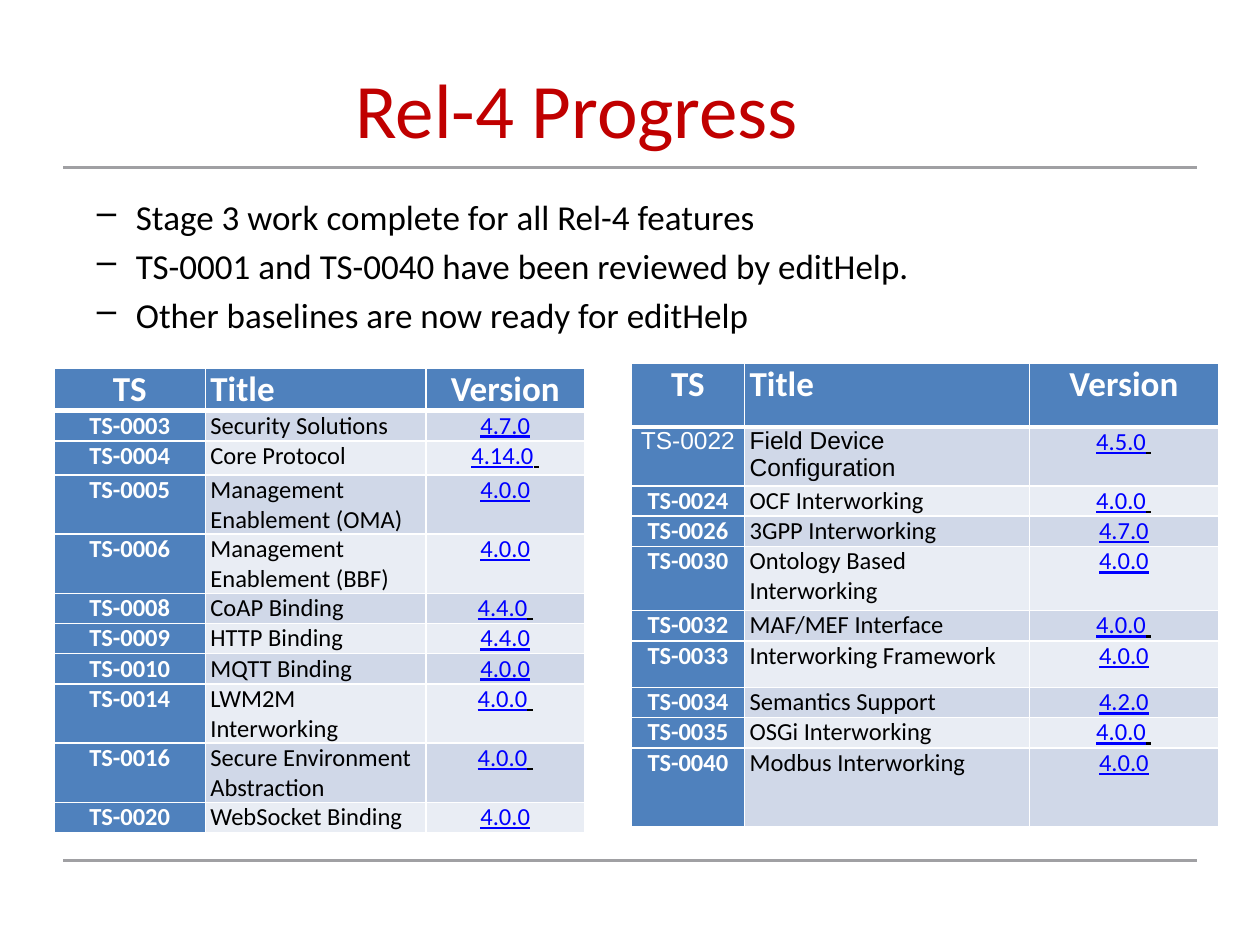
import dataclasses

import lxml.etree
import pptx
import pptx.dml.color
import pptx.enum.shapes
import pptx.enum.text
import pptx.oxml.ns
import pptx.util

Inches = pptx.util.Inches
Pt = pptx.util.Pt
ALIGN = pptx.enum.text.PP_ALIGN


@dataclasses.dataclass(frozen=True)
class Theme:
    font: str = "Calibri"
    alternate_font: str = "Arial"
    title_color: str = "C00000"
    text_color: str = "000000"
    light: str = "FFFFFF"
    link: str = "0000FF"
    rule: str = "A0A0A3"
    accent: str = "4F81BD"
    bands: tuple = ("D0D8E8", "E9EDF4")
    title_size: int = 44
    heading_size: int = 20
    cell_size: int = 14


THEME = Theme()

POINTS = [
    "Stage 3 work complete for all Rel-4 features",
    "TS-0001 and TS-0040 have been reviewed by editHelp.",
    "Other baselines are now ready for editHelp",
]
HEADINGS = ("TS", "Title", "Version")
EARLIER_SPECS = [
    ("TS-0003", "Security Solutions", "4.7.0", 0.24),
    ("TS-0004", "Core Protocol", "4.14.0 ", 0.27),
    ("TS-0005", "Management Enablement (OMA)", "4.0.0", 0.47),
    ("TS-0006", "Management Enablement (BBF)", "4.0.0", 0.47),
    ("TS-0008", "CoAP Binding", "4.4.0 ", 0.24),
    ("TS-0009", "HTTP Binding", "4.4.0", 0.24),
    ("TS-0010", "MQTT Binding", "4.0.0", 0.24),
    ("TS-0014", "LWM2M Interworking", "4.0.0 ", 0.47),
    ("TS-0016", "Secure Environment Abstraction", "4.0.0 ", 0.47),
    ("TS-0020", "WebSocket Binding", "4.0.0", 0.24),
]
LATER_SPECS = [
    ("TS-0022", "Field Device Configuration", "4.5.0 ", 0.43),
    ("TS-0024", "OCF Interworking", "4.0.0 ", 0.24),
    ("TS-0026", "3GPP Interworking", "4.7.0", 0.24),
    ("TS-0030", "Ontology Based Interworking", "4.0.0", 0.51),
    ("TS-0032", "MAF/MEF Interface", "4.0.0 ", 0.24),
    ("TS-0033", "Interworking Framework", "4.0.0", 0.37),
    ("TS-0034", "Semantics Support", "4.2.0", 0.24),
    ("TS-0035", "OSGi Interworking", "4.0.0 ", 0.24),
    ("TS-0040", "Modbus Interworking", "4.0.0", 0.63),
]
ALTERNATE_FONT_SPECS = {"TS-0022"}


def rgb(value):
    return pptx.dml.color.RGBColor.from_string(value)


def add_text(paragraph, text, size, color=THEME.text_color, font=THEME.font,
             bold=False, underline=False, align=ALIGN.LEFT):
    paragraph.alignment = align
    run = paragraph.add_run()
    run.text = text
    run.font.size = Pt(size)
    run.font.name = font
    run.font.bold = bold
    run.font.underline = underline
    run.font.color.rgb = rgb(color)


def add_frame(slide, left, top, width, height):
    frame = slide.shapes.add_textbox(
        Inches(left), Inches(top), Inches(width), Inches(height)).text_frame
    frame.word_wrap = True
    return frame


def add_rule(slide, y):
    rule = slide.shapes.add_connector(
        pptx.enum.shapes.MSO_CONNECTOR.STRAIGHT,
        Inches(0.5), Inches(y), Inches(9.5), Inches(y))
    rule.line.color.rgb = rgb(THEME.rule)
    rule.line.width = Pt(1.75)
    lxml.etree.SubElement(rule._element.spPr, pptx.oxml.ns.qn("a:effectLst"))


def add_title(slide, text):
    frame = add_frame(slide, 0.08, 0.42, 9, 1.25)
    frame.margin_top = Inches(0.07)
    add_text(frame.paragraphs[0], text, THEME.title_size,
             color=THEME.title_color, align=ALIGN.CENTER)


def add_points(slide, points):
    frame = add_frame(slide, 0.17, 1.5, 9.54, 1.58)
    for index, point in enumerate(points):
        paragraph = frame.add_paragraph() if index else frame.paragraphs[0]
        paragraph.level = 1
        if index:
            paragraph.space_before = Pt(4)
        properties = paragraph._p.get_or_add_pPr()
        properties.set("marL", str(Inches(0.81)))
        properties.set("indent", str(Inches(-0.31)))
        lxml.etree.SubElement(
            properties, pptx.oxml.ns.qn("a:buChar"), char="–")
        add_text(paragraph, point, THEME.heading_size)


def style_cell(cell, fill, top=1, bottom=1):
    cell.margin_left = cell.margin_right = Inches(0.04)
    cell.margin_top = cell.margin_bottom = 0
    properties = cell._tc.get_or_add_tcPr()
    for side, width in (("L", 1), ("R", 1), ("T", top), ("B", bottom)):
        border = lxml.etree.SubElement(
            properties, pptx.oxml.ns.qn(f"a:ln{side}"), w=str(Pt(width)))
        paint = lxml.etree.SubElement(border, pptx.oxml.ns.qn("a:solidFill"))
        lxml.etree.SubElement(
            paint, pptx.oxml.ns.qn("a:srgbClr"), val=THEME.light)
    cell.fill.solid()
    cell.fill.fore_color.rgb = rgb(fill)


def fill_heading_row(cells):
    for cell, heading in zip(cells, HEADINGS):
        style_cell(cell, THEME.accent, bottom=3)
        add_text(cell.text_frame.paragraphs[0], heading, THEME.heading_size,
                 color=THEME.light, bold=True,
                 align=ALIGN.LEFT if heading == "Title" else ALIGN.CENTER)


def fill_spec_row(cells, number, title, version, band, top):
    for cell, fill in zip(cells, (THEME.accent, band, band)):
        style_cell(cell, fill, top=top)
    number_line, title_line, version_line = (
        cell.text_frame.paragraphs[0] for cell in cells)
    alternate = number in ALTERNATE_FONT_SPECS
    font = THEME.alternate_font if alternate else THEME.font
    add_text(number_line, number, THEME.cell_size, color=THEME.light,
             font=font, bold=not alternate, align=ALIGN.CENTER)
    add_text(title_line, title, THEME.cell_size, font=font)
    release = version.rstrip()
    add_text(version_line, release, THEME.cell_size, color=THEME.link,
             underline=True, align=ALIGN.CENTER)
    if release != version:
        add_text(version_line, " ", THEME.cell_size, underline=True,
                 align=ALIGN.CENTER)


def add_spec_table(slide, left, top, widths, heading_height, specs):
    heights = [heading_height] + [spec[-1] for spec in specs]
    table = slide.shapes.add_table(
        len(heights), len(widths), Inches(left), Inches(top),
        Inches(sum(widths)), Inches(sum(heights))).table
    table.horz_banding = False
    for column, width in zip(table.columns, widths):
        column.width = Inches(width)
    for row, height in zip(table.rows, heights):
        row.height = Inches(height)
    heading_row, *spec_rows = table.rows
    fill_heading_row(heading_row.cells)
    for index, (row, spec) in enumerate(zip(spec_rows, specs)):
        fill_spec_row(list(row.cells), *spec[:3], band=THEME.bands[index % 2],
                      top=1 if index else 3)


def main():
    deck = pptx.Presentation()
    deck.slide_width = Inches(10)
    deck.slide_height = Inches(7.5)
    slide = deck.slides.add_slide(deck.slide_layouts[6])
    for y in (6.83, 1.33):
        add_rule(slide, y)
    add_title(slide, "Rel-4 Progress")
    add_points(slide, POINTS)
    add_spec_table(slide, 0.43, 2.92, (1.2, 1.75, 1.26), 0.34, EARLIER_SPECS)
    add_spec_table(slide, 5.01, 2.88, (0.9, 2.26, 1.5), 0.51, LATER_SPECS)
    deck.save("out.pptx")


if __name__ == "__main__":
    main()
